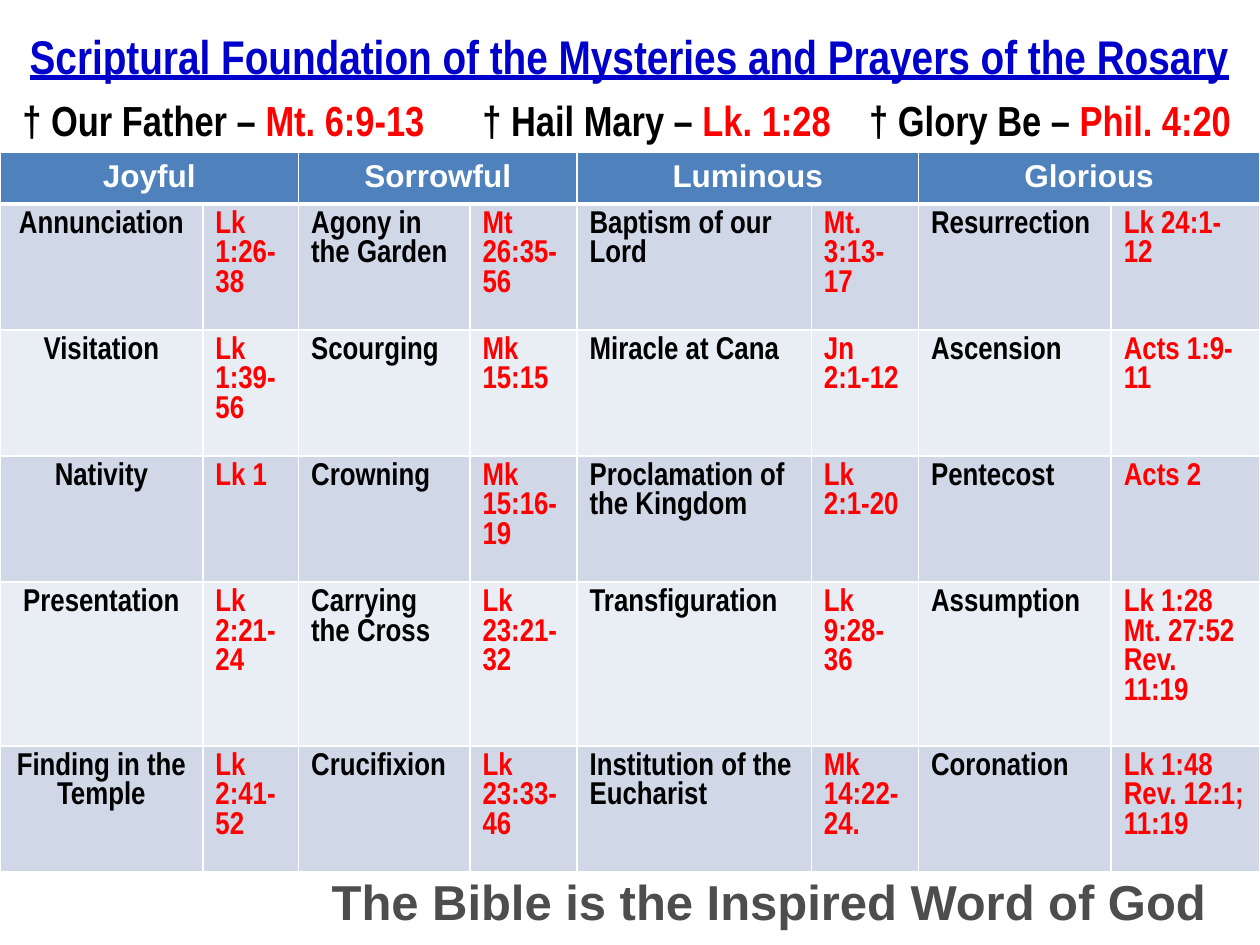
from lxml import etree
from pptx import Presentation
from pptx.dml.color import RGBColor
from pptx.enum.text import PP_ALIGN
from pptx.oxml.ns import qn
from pptx.util import Inches, Pt

LEFT, CENTER, RIGHT = PP_ALIGN.LEFT, PP_ALIGN.CENTER, PP_ALIGN.RIGHT

WHITE = RGBColor(0xFF, 0xFF, 0xFF)
BLACK = RGBColor(0, 0, 0)
RED = RGBColor(0xFF, 0, 0)
TITLE_BLUE = RGBColor(0, 0, 0xCC)
FOOTER_GRAY = RGBColor(0x4D, 0x4D, 0x4D)
HEADER_BLUE = RGBColor(0x4F, 0x81, 0xBD)
BANDS = (RGBColor(0xD0, 0xD8, 0xE8), RGBColor(0xE9, 0xED, 0xF4))

SANS = "Arial"
NARROW = "Arial Narrow"

TITLE = "Scriptural Foundation of the Mysteries and Prayers of the Rosary"
PRAYERS = [
    ("† Our Father – ", "Mt. 6:9-13"),
    ("\t† Hail Mary – ", "Lk. 1:28"),
    ("\t† Glory Be – ", "Phil. 4:20"),
]
PRAYER_TABS = (3.65, 6.72)
FOOTER = "The Bible is the Inspired Word of God"

COLUMN_WIDTHS = (1.61, 0.76, 1.36, 0.85, 1.86, 0.85, 1.53, 1.18)
ROW_HEIGHTS = (0.41, 1, 1, 1, 1.3, 1)
MYSTERY_GROUPS = ("Joyful", "Sorrowful", "Luminous", "Glorious")
MYSTERIES = [
    ("Annunciation", "Lk 1:26-38", "Agony in the Garden", "Mt 26:35-56",
     "Baptism of our Lord", "Mt. 3:13-17", "Resurrection", "Lk 24:1-12"),
    ("Visitation", "Lk 1:39-56", "Scourging", "Mk 15:15",
     "Miracle at Cana", "Jn 2:1-12", "Ascension", "Acts 1:9-11"),
    ("Nativity", "Lk 1", "Crowning", "Mk 15:16-19",
     "Proclamation of the Kingdom", "Lk 2:1-20", "Pentecost", "Acts 2"),
    ("Presentation", "Lk 2:21-24", "Carrying the Cross", "Lk 23:21-32",
     "Transfiguration", "Lk 9:28-36", "Assumption",
     "Lk 1:28\vMt. 27:52\nRev. 11:19"),
    ("Finding in the Temple", "Lk 2:41-52", "Crucifixion", "Lk 23:33-46",
     "Institution of the Eucharist", "Mk 14:22-24.", "Coronation",
     "Lk 1:48\vRev. 12:1; 11:19"),
]


def style_paragraph(paragraph, name, size, color=None, alignment=LEFT):
    paragraph.alignment = alignment
    font = paragraph.font
    font.name, font.size, font.bold = name, Pt(size), True
    if color is not None:
        font.color.rgb = color


def add_line(parent, tag, color, width):
    line = etree.SubElement(parent, qn(tag), w=str(Pt(width)))
    fill = etree.SubElement(line, qn("a:solidFill"))
    etree.SubElement(fill, qn("a:srgbClr"), val=str(color))
    return line


def add_text_frame(slide, left, top, width, height):
    box = slide.shapes.add_textbox(left, top, width, height)
    box.text_frame.word_wrap = True
    return box.text_frame


def add_tab_stops(paragraph, positions):
    properties = paragraph._p.get_or_add_pPr()
    tab_list = etree.Element(qn("a:tabLst"))
    for position in positions:
        etree.SubElement(tab_list, qn("a:tab"), pos=str(Inches(position)), algn="l")
    properties.find(qn("a:defRPr")).addprevious(tab_list)


def add_heading(slide, left, top, width, height):
    frame = add_text_frame(slide, left, top, width, height)
    title = frame.paragraphs[0]
    title.text = TITLE
    title.space_before = Pt(5)
    style_paragraph(title, NARROW, 27, TITLE_BLUE, CENTER)
    title.font.underline = True

    prayers = frame.add_paragraph()
    prayers.space_before = Pt(6)
    style_paragraph(prayers, NARROW, 24)
    add_tab_stops(prayers, PRAYER_TABS)
    for prayer, verse in PRAYERS:
        for text, color in ((prayer, BLACK), (verse, RED)):
            run = prayers.add_run()
            run.text = text
            run.font.color.rgb = color


def fill_cell(cell, text, fill, font_name, color, alignment, top=1, bottom=1):
    cell.text = text
    for paragraph in cell.text_frame.paragraphs:
        style_paragraph(paragraph, font_name, 18, color, alignment)
    properties = cell._tc.get_or_add_tcPr()
    for side, width in (("L", 1), ("R", 1), ("T", top), ("B", bottom)):
        add_line(properties, f"a:ln{side}", WHITE, width)
    cell.fill.solid()
    cell.fill.fore_color.rgb = fill


def add_mysteries_table(slide, left, top, width, height):
    table = slide.shapes.add_table(
        len(ROW_HEIGHTS), len(COLUMN_WIDTHS), left, top, width, height).table
    for column, column_width in zip(table.columns, COLUMN_WIDTHS):
        column.width = Inches(column_width)
    for row, row_height in zip(table.rows, ROW_HEIGHTS):
        row.height = Inches(row_height)

    for index, group in enumerate(MYSTERY_GROUPS):
        first, second = table.cell(0, 2 * index), table.cell(0, 2 * index + 1)
        first.merge(second)
        fill_cell(first, group, HEADER_BLUE, SANS, WHITE, CENTER, bottom=3)

    for row_index, mysteries in enumerate(MYSTERIES, start=1):
        band = BANDS[(row_index - 1) % 2]
        for column_index, text in enumerate(mysteries):
            fill_cell(table.cell(row_index, column_index), text, band, NARROW,
                      RED if column_index % 2 else BLACK,
                      CENTER if column_index == 0 else LEFT,
                      top=3 if row_index == 1 else 1)


def add_footer(slide, left, top, width, height):
    paragraph = add_text_frame(slide, left, top, width, height).paragraphs[0]
    run = paragraph.add_run()
    run.text = FOOTER
    paragraph.space_before = Pt(3)
    style_paragraph(paragraph, SANS, 28, FOOTER_GRAY, RIGHT)
    add_line(run._r.get_or_add_rPr(), "a:ln", WHITE, 0.75)


def main():
    presentation = Presentation()
    presentation.slide_width, presentation.slide_height = Inches(10), Inches(7.5)
    slide = presentation.slides.add_slide(presentation.slide_layouts[6])
    add_footer(slide, Inches(1.42), Inches(6.87), Inches(8.25), Inches(0.88))
    add_heading(slide, Inches(0.08), Inches(0.17), Inches(9.83), Inches(0.96))
    add_mysteries_table(slide, Inches(0), Inches(1.21), Inches(10), Inches(5.71))
    presentation.save("out.pptx")


if __name__ == "__main__":
    main()
